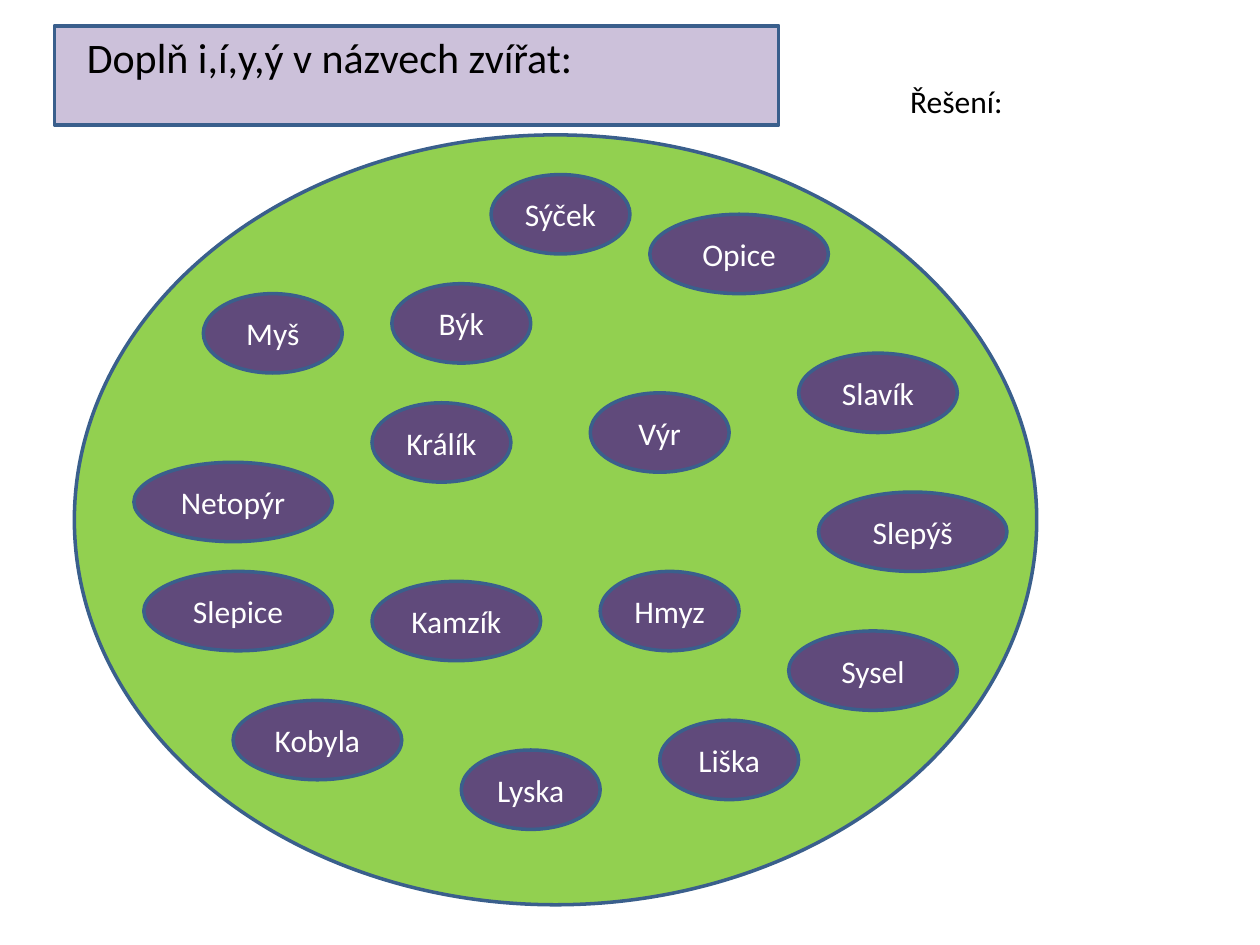
from pptx import Presentation, util as u
from pptx.dml.color import RGBColor
from pptx.enum import shapes, text

GREEN = RGBColor(0x92, 0xD0, 0x50)
LILAC = RGBColor(0xCC, 0xC1, 0xDA)
PURPLE = RGBColor(0x60, 0x4A, 0x7B)
BLUE = RGBColor(0x3A, 0x5F, 0x8C)
WHITE = RGBColor(0xFF, 0xFF, 0xFF)
BLACK = RGBColor(0x00, 0x00, 0x00)

presentation = Presentation()
presentation.slide_width, presentation.slide_height = u.Inches(10), u.Inches(7.5)
slide = presentation.slides.add_slide(presentation.slide_layouts[6])

# Square grid: 127 cells across the slide, counted from the title panel's corner
CELL = presentation.slide_width / 127
LEFT, TOP = 5.5, 2.6
ANIMAL_ROWS = 8


def add_box(kind, column, row, columns, rows, fill=None):
    """Add a filled shape, or a text box when no fill is given."""
    area = [round(n * CELL) for n in (LEFT + column, TOP + row, columns, rows)]
    if fill is None:
        return slide.shapes.add_textbox(*area)
    shape = slide.shapes.add_shape(kind, *area)
    shape.shadow.inherit = False
    shape.fill.solid()
    shape.fill.fore_color.rgb = fill
    shape.line.color.rgb = BLUE
    shape.line.width = u.Pt(2)
    return shape


def write(shape, words, size, color):
    paragraph = shape.text_frame.paragraphs[0]
    paragraph.text = words
    paragraph.font.name = "Calibri"
    paragraph.font.size = u.Pt(size)
    paragraph.font.color.rgb = color
    return paragraph


# Meadow and title panel
OVAL = shapes.MSO_SHAPE.FLOWCHART_CONNECTOR
add_box(OVAL, 2, 11, 97, 77.6, GREEN)
add_box(shapes.MSO_SHAPE.RECTANGLE, 0, 0, 73, 10, LILAC)

# Animals: name, column, row, width in columns
animals = [
    ("Myš", 15, 27, 14), ("Býk", 34, 26, 14),
    ("Králík", 32, 38, 14), ("Výr", 54, 37, 14),
    ("Sýček", 44, 15, 14), ("Opice", 60, 19, 18),
    ("Slavík", 75, 33, 16), ("Hmyz", 55, 55, 14),
    ("Kamzík", 32, 56, 17), ("Liška", 61, 70, 14),
    ("Netopýr", 8, 44, 20), ("Slepýš", 77, 47, 19),
    ("Sysel", 74, 61, 17), ("Lyska", 41, 73, 14),
    ("Slepice", 9, 55, 19), ("Kobyla", 18, 68, 17),
]
for name, column, row, columns in animals:
    shape = add_box(OVAL, column, row, columns, ANIMAL_ROWS, PURPLE)
    shape.text_frame.word_wrap = False
    shape.text_frame.vertical_anchor = text.MSO_ANCHOR.MIDDLE
    paragraph = write(shape, name, 18, WHITE)
    paragraph.alignment = text.PP_ALIGN.CENTER

# Headings
headings = [
    ("Doplň i,í,y,ý v názvech zvířat:", 24, 2, 0, 62, 6.4),
    ("Řešení:", 18, 85, 5, 19, 5.1),
]
for words, size, *area in headings:
    shape = add_box(None, *area)
    shape.text_frame.word_wrap = True
    shape.text_frame.auto_size = text.MSO_AUTO_SIZE.SHAPE_TO_FIT_TEXT
    write(shape, words, size, BLACK)

presentation.save("out.pptx")
